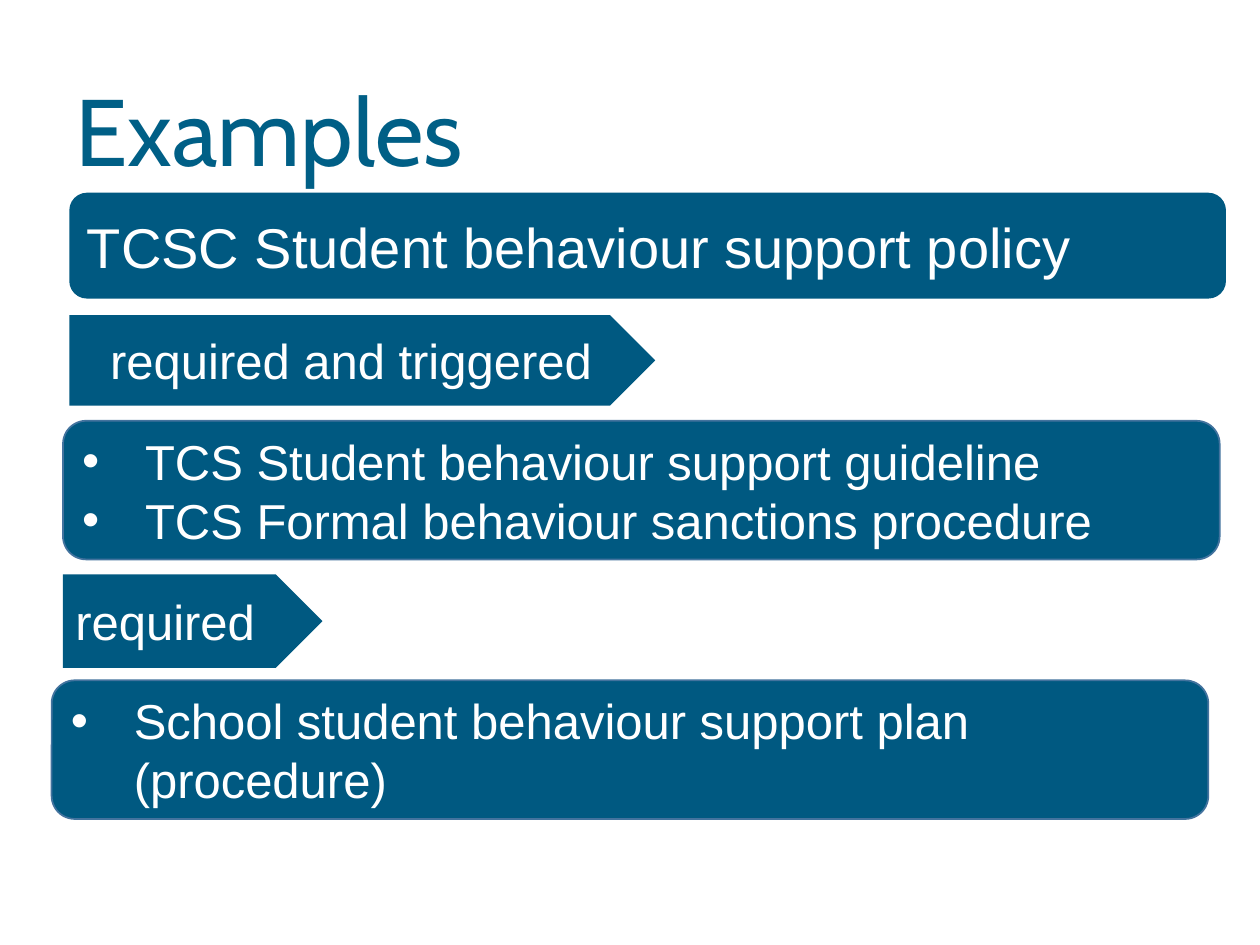
from dataclasses import dataclass

from lxml.etree import SubElement
from pptx import Presentation
from pptx.dml.color import RGBColor
from pptx.enum.shapes import MSO_SHAPE
from pptx.enum.text import MSO_ANCHOR, MSO_AUTO_SIZE, PP_ALIGN
from pptx.oxml.ns import qn
from pptx.util import Inches, Pt


@dataclass(frozen=True)
class Theme:
    title_color: RGBColor = RGBColor(0x00, 0x5F, 0x86)
    fill: RGBColor = RGBColor(0x00, 0x59, 0x81)
    outline: RGBColor = RGBColor(0x43, 0x73, 0x9E)
    text: RGBColor = RGBColor(0xFF, 0xFF, 0xFF)
    title_font: str = "Cabin"
    body_font: str = "Arial"
    title_size: int = 54
    policy_size: int = 32
    body_size: int = 28


THEME = Theme()
PANEL_WIDTH = 9.18


def style_font(font, name, size, color):
    font.name = name
    font.size = Pt(size)
    font.color.rgb = color


def add_bullet(paragraph):
    properties = paragraph._p.get_or_add_pPr()
    properties.set("marL", str(Inches(0.5)))
    properties.set("indent", str(Inches(-0.5)))
    SubElement(properties, qn("a:buFont"), typeface="Arial")
    SubElement(properties, qn("a:buChar"), char="•")


def set_title(slide, wording):
    title = slide.shapes.title
    title.left, title.top = Inches(0.5), Inches(0.69)
    title.width, title.height = Inches(8.62), Inches(0.84)
    frame = title.text_frame
    frame.text = wording
    frame.auto_size = MSO_AUTO_SIZE.NONE
    frame.vertical_anchor = MSO_ANCHOR.BOTTOM
    heading = frame.paragraphs[0]
    heading.alignment = PP_ALIGN.LEFT
    heading.line_spacing = 0.9
    style_font(heading.font, THEME.title_font, THEME.title_size, THEME.title_color)


def add_block(slide, preset, left, top, width, height, lines,
              size=THEME.body_size, align=PP_ALIGN.LEFT, bulleted=False):
    block = slide.shapes.add_shape(
        preset, Inches(left), Inches(top), Inches(width), Inches(height))
    block.shadow.inherit = False
    block.fill.solid()
    block.fill.fore_color.rgb = THEME.fill
    block.line.fill.background()
    frame = block.text_frame
    frame.word_wrap = True
    frame.vertical_anchor = MSO_ANCHOR.MIDDLE
    frame.text = "\n".join(lines)
    for paragraph in frame.paragraphs:
        paragraph.alignment = align
        if bulleted:
            add_bullet(paragraph)
        style_font(paragraph.font, THEME.body_font, size, THEME.text)
    return block


def add_policy(slide, left, top, wording):
    add_block(slide, MSO_SHAPE.ROUNDED_RECTANGLE, left, top, PANEL_WIDTH, 0.84,
              [wording], size=THEME.policy_size)


def add_requirement(slide, left, top, width, height, wording, align=PP_ALIGN.LEFT):
    add_block(slide, MSO_SHAPE.PENTAGON, left, top, width, height,
              [wording], align=align)


def add_documents(slide, left, top, documents):
    """Add an outlined panel that lists the documents a policy calls for."""
    panel = add_block(slide, MSO_SHAPE.ROUNDED_RECTANGLE, left, top, PANEL_WIDTH, 1.1,
                      documents, bulleted=True)
    panel.line.color.rgb = THEME.outline
    panel.line.width = Pt(1)


def main():
    presentation = Presentation()
    presentation.slide_width = Inches(10)
    presentation.slide_height = Inches(7.5)
    slide = presentation.slides.add_slide(
        presentation.slide_layouts.get_by_name("Title Only"))

    set_title(slide, "Examples")
    add_policy(slide, 0.55, 1.53, "TCSC Student behaviour support policy")
    add_requirement(slide, 0.55, 2.5, 4.65, 0.72, "required and triggered",
                    PP_ALIGN.CENTER)
    add_documents(slide, 0.5, 3.34, ["TCS Student behaviour support guideline",
                                     "TCS Formal behaviour sanctions procedure"])
    add_requirement(slide, 0.5, 4.56, 2.06, 0.74, "required")
    add_documents(slide, 0.41, 5.4,
                  ["School student behaviour support plan (procedure)"])
    presentation.save("out.pptx")


if __name__ == "__main__":
    main()
